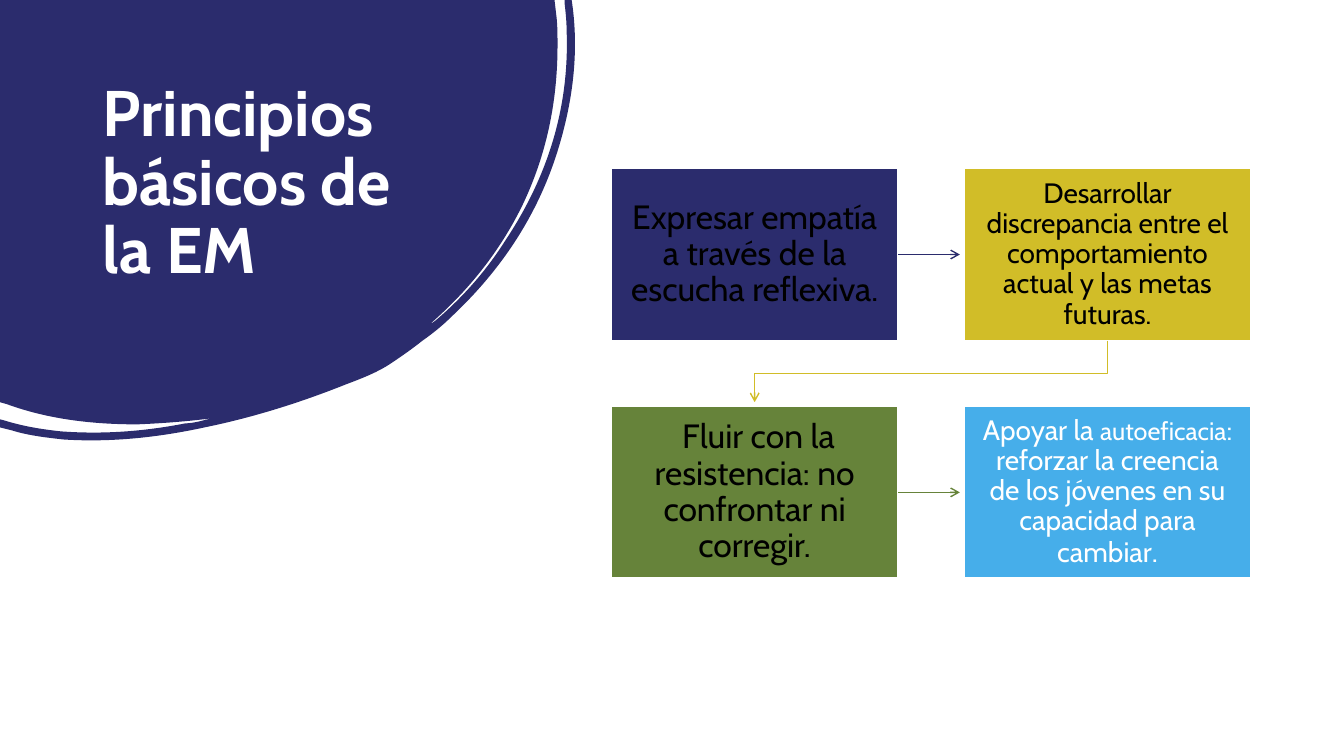
"""Build the slide on the basic principles of motivational interviewing."""
from lxml.etree import SubElement
from pptx import Presentation
from pptx.dml.color import RGBColor
from pptx.enum.shapes import MSO_CONNECTOR, MSO_SHAPE
from pptx.enum.text import MSO_ANCHOR, MSO_AUTO_SIZE, PP_ALIGN
from pptx.oxml.ns import qn
from pptx.util import Inches, Pt

TITLE = "Principios básicos de la EM"
FONT = "Cabin"
NAVY, GOLD, GREEN, SKY = "2B2C6D", "D1BD28", "66833A", "46AEEA"
BLACK, WHITE = "000000", "FFFFFF"

PRINCIPLES = [
    (NAVY, BLACK, [("Expresar empatía a través de la escucha reflexiva.", 24)]),
    (GOLD, BLACK, [("Desarrollar discrepancia entre el comportamiento actual "
                    "y las metas futuras.", 20)]),
    (GREEN, BLACK, [(" Fluir con la resistencia: no confrontar ni corregir.", 24)]),
    (SKY, WHITE, [("Apoyar la ", 20), ("autoeficacia", 18),
                  (": reforzar la creencia de los jóvenes en su capacidad "
                   "para cambiar", 20), (".", 21)]),
]

GRID_LEFT, GRID_TOP = 6.06, 1.67
STEP_X, STEP_Y = 3.5, 2.36
BOX_W, BOX_H = 2.85, 1.71
ARROW_GAP = 0.04

BLOB = [
    [(0, 0)], [(5.5, 0)], [(5.52, 0.17)],
    [(5.53, 0.26), (5.53, 0.36), (5.53, 0.45)],
    [(5.53, 1.01), (5.42, 1.54), (5.18, 2.04)],
    [(4.96, 2.49), (4.65, 2.88), (4.27, 3.21)],
    [(4.29, 3.21), (4.3, 3.19), (4.32, 3.18)],
    [(4.59, 2.95), (4.82, 2.69), (5.01, 2.39)],
    [(5.43, 1.76), (5.65, 1.07), (5.62, 0.3)],
    [(5.62, 0.21), (5.61, 0.12), (5.6, 0.03)],
    [(5.6, 0)], [(5.67, 0)], [(5.68, 0.07)],
    [(5.74, 0.54), (5.68, 1.02), (5.53, 1.5)],
    [(5.33, 2.14), (4.97, 2.68), (4.48, 3.14)],
    [(4.39, 3.23), (4.29, 3.31), (4.19, 3.38)],
    [(4.09, 3.46), (3.99, 3.53), (3.87, 3.61)],
    [(3.75, 3.69), (3.6, 3.75), (3.44, 3.81)],
    [(2.99, 3.99), (2.52, 4.14), (2.03, 4.24)],
    [(1.57, 4.34), (1.1, 4.39), (0.63, 4.36)],
    [(0.45, 4.34), (0.28, 4.32), (0.12, 4.27)],
    [(0, 4.24)], [(0, 4.16)], [(0.04, 4.17)],
    [(0.23, 4.23), (0.42, 4.26), (0.61, 4.28)],
    [(1.03, 4.31), (1.43, 4.28), (1.84, 4.2)],
    [(1.89, 4.2), (1.93, 4.19), (1.98, 4.18)],
    [(2.02, 4.17), (2.06, 4.16), (2.1, 4.15)],
    [(1.86, 4.18), (1.61, 4.2), (1.36, 4.21)],
    [(0.92, 4.21), (0.48, 4.16), (0.07, 4.01)],
    [(0, 3.99)],
]


def color(hex_code):
    return RGBColor.from_string(hex_code)


def add_outline(slide, segments, close):
    points = [(Inches(x), Inches(y)) for segment in segments for x, y in segment]
    builder = slide.shapes.build_freeform(*points[0])
    builder.add_line_segments(points[1:], close=close)
    outline = builder.convert_to_shape()
    outline.shadow.inherit = False
    lines = iter(outline._element.findall(".//" + qn("a:lnTo")))
    for segment in segments[1:]:
        first, *others = [next(lines) for _ in segment]
        if others:
            first.tag = qn("a:cubicBezTo")
        for line in others:
            first.append(line[0])
            line.getparent().remove(line)
    return outline


def style_arrow(arrow, hex_code):
    arrow.line.color.rgb = color(hex_code)
    arrow.line.width = Pt(1)
    SubElement(arrow.line._get_or_add_ln(), qn("a:tailEnd"), type="arrow")


def format_run(run, size, hex_code, bold=False):
    run.font.name = FONT
    run.font.size = Pt(size)
    run.font.bold = bold
    run.font.color.rgb = color(hex_code)


def add_principle(slide, index, fill, ink, pieces):
    row, column = divmod(index, 2)
    box = slide.shapes.add_shape(
        MSO_SHAPE.RECTANGLE, Inches(GRID_LEFT + column * STEP_X),
        Inches(GRID_TOP + row * STEP_Y), Inches(BOX_W), Inches(BOX_H))
    box.shadow.inherit = False
    box.fill.solid()
    box.fill.fore_color.rgb = color(fill)
    box.line.color.rgb = color(WHITE)
    box.line.width = Pt(1.5)
    frame = box.text_frame
    frame.word_wrap = True
    frame.vertical_anchor = MSO_ANCHOR.MIDDLE
    frame.margin_left = frame.margin_right = Inches(0.15)
    frame.margin_top = frame.margin_bottom = Inches(0.15)
    paragraph = frame.paragraphs[0]
    paragraph.alignment = PP_ALIGN.CENTER
    paragraph.line_spacing = 0.9
    for text, size in pieces:
        run = paragraph.add_run()
        run.text = text
        format_run(run, size, ink)
    return box


def add_row_arrow(slide, origin, target, hex_code):
    middle = origin.top + origin.height // 2
    arrow = slide.shapes.add_connector(
        MSO_CONNECTOR.STRAIGHT, origin.left + origin.width, middle,
        target.left - Inches(ARROW_GAP), middle)
    arrow.begin_connect(origin, 3)
    style_arrow(arrow, hex_code)
    SubElement(arrow._element.spPr, qn("a:effectLst"))


def main():
    prs = Presentation()
    prs.slide_width, prs.slide_height = Inches(13.33), Inches(7.5)
    slide = prs.slides.add_slide(prs.slide_layouts[5])

    blob = add_outline(slide, BLOB, close=True)
    blob.fill.solid()
    blob.fill.fore_color.rgb = color(NAVY)
    blob.line.fill.background()

    title = slide.shapes.title
    title.left, title.top = Inches(0.92), Inches(0.72)
    title.width, title.height = Inches(3.52), Inches(2.22)
    slide.shapes._spTree.append(title._element)
    heading = title.text_frame
    heading.text = TITLE
    heading.word_wrap = True
    heading.auto_size = MSO_AUTO_SIZE.NONE
    heading.vertical_anchor = MSO_ANCHOR.MIDDLE
    heading.paragraphs[0].alignment = PP_ALIGN.LEFT
    heading.paragraphs[0].line_spacing = 0.89
    format_run(heading.paragraphs[0].runs[0], 46, WHITE, bold=True)

    empathy, discrepancy, resistance, efficacy = [
        add_principle(slide, index, *principle)
        for index, principle in enumerate(PRINCIPLES)]
    add_row_arrow(slide, empathy, discrepancy, NAVY)
    add_row_arrow(slide, resistance, efficacy, GREEN)

    left_axis = GRID_LEFT + BOX_W / 2
    right_axis = left_axis + STEP_X
    upper_edge = GRID_TOP + BOX_H
    lower_edge = GRID_TOP + STEP_Y
    bend = (upper_edge + lower_edge) / 2
    elbow = add_outline(slide, [
        [(right_axis, upper_edge)], [(right_axis, bend)],
        [(left_axis, bend)], [(left_axis, lower_edge - ARROW_GAP)]], close=False)
    elbow.fill.background()
    style_arrow(elbow, GOLD)

    prs.save("out.pptx")


if __name__ == "__main__":
    main()
